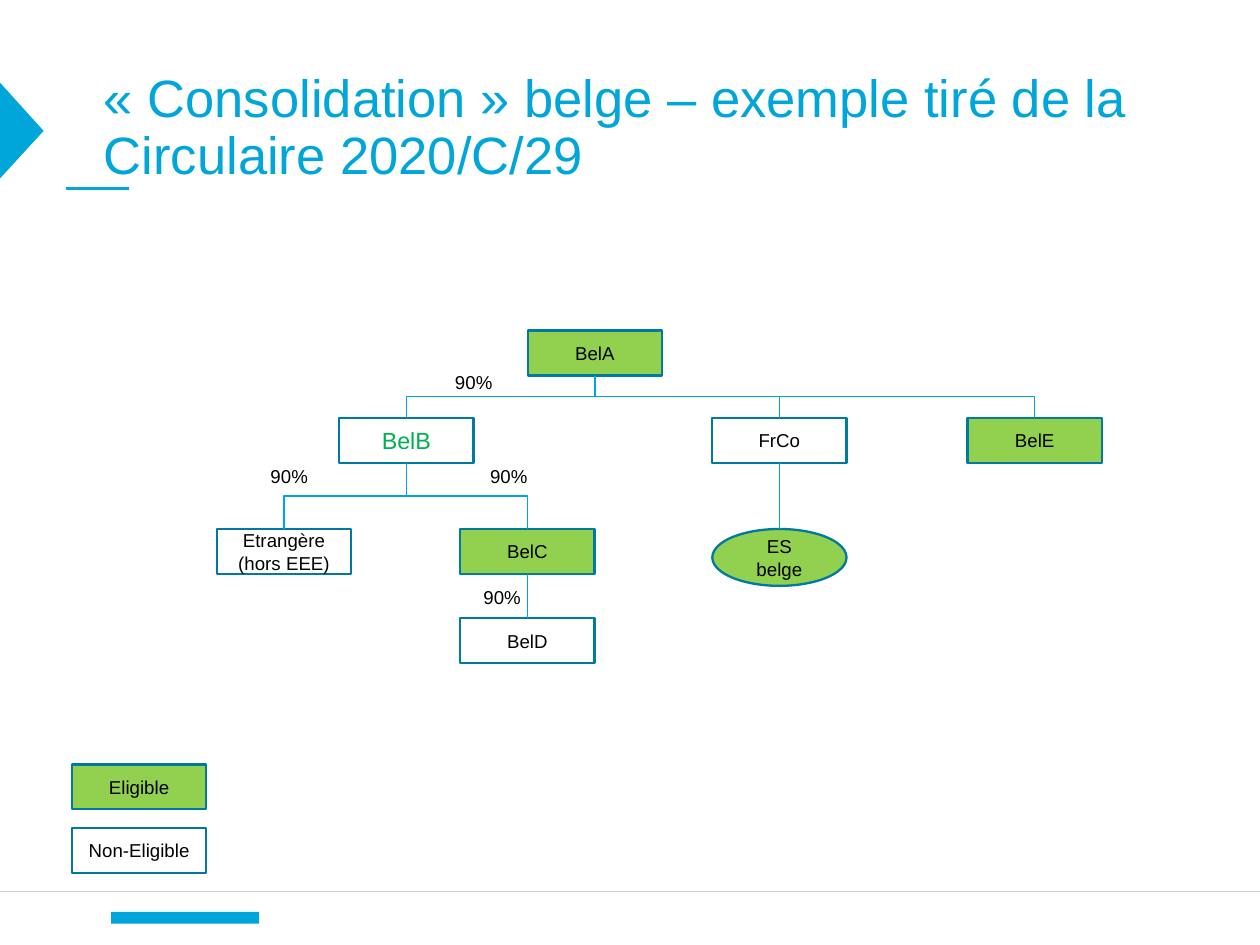
from dataclasses import dataclass

from lxml import etree
from pptx import Presentation
from pptx import util as u
from pptx.dml.color import RGBColor
from pptx.enum import shapes, text
from pptx.oxml import ns

Cm, Pt = u.Cm, u.Pt


@dataclass(frozen=True)
class Theme:
    font: str = "Arial"
    accent: RGBColor = RGBColor(0x00, 0xA5, 0xD9)
    outline: RGBColor = RGBColor(0x00, 0x7A, 0xA1)
    eligible: RGBColor = RGBColor(0x92, 0xD0, 0x50)
    not_eligible: RGBColor = RGBColor(0xFF, 0xFF, 0xFF)
    ink: RGBColor = RGBColor(0x00, 0x00, 0x00)
    highlight: RGBColor = RGBColor(0x00, 0xB0, 0x50)
    rule: RGBColor = RGBColor(0xD2, 0xD2, 0xD2)
    title_size: float = 22.5
    emphasis_size: float = 10
    label_size: float = 8


THEME = Theme()
SLIDE_WIDTH, SLIDE_HEIGHT = 19.05, 14.29
BOX_WIDTH, BOX_HEIGHT, ELLIPSE_HEIGHT = 2.03, 0.68, 0.86
TOP_ROW, SECOND_ROW, THIRD_ROW, FOURTH_ROW = 5.0, 6.32, 8.0, 9.35
BELB_LEFT, BELC_LEFT, FRCO_LEFT, LEGEND_LEFT = 5.13, 6.96, 10.77, 1.09
RECTANGLE = shapes.MSO_SHAPE.RECTANGLE

# name: (left, top, eligible)
COMPANIES = {
    "BelA": (7.98, TOP_ROW, True),
    "BelB": (BELB_LEFT, SECOND_ROW, False),
    "FrCo": (FRCO_LEFT, SECOND_ROW, False),
    "BelE": (14.63, SECOND_ROW, True),
    "Etrangère (hors EEE)": (3.28, THIRD_ROW, False),
    "BelC": (BELC_LEFT, THIRD_ROW, True),
    "ES belge": (FRCO_LEFT, THIRD_ROW, True),
    "BelD": (BELC_LEFT, FOURTH_ROW, False),
    "Eligible": (LEGEND_LEFT, 11.56, True),
    "Non-Eligible": (LEGEND_LEFT, 12.52, False),
}
HOLDINGS = [
    ("BelA", "BelB"), ("BelA", "FrCo"), ("BelA", "BelE"),
    ("BelB", "Etrangère (hors EEE)"), ("BelB", "BelC"),
    ("BelC", "BelD"), ("FrCo", "ES belge"),
]
STAKE_POSITIONS = [(6.63, 5.49), (3.84, 6.91), (7.06, 8.74), (7.16, 6.91)]


def add_run(paragraph, content, size=THEME.label_size, color=THEME.ink):
    run = paragraph.add_run()
    run.text = content
    run.font.name = THEME.font
    run.font.size = Pt(size)
    run.font.color.rgb = color


def fill_plain(shape, color):
    shape.shadow.inherit = False
    shape.fill.solid()
    shape.fill.fore_color.rgb = color
    shape.line.fill.background()


def style_line(connector, color, width):
    connector.line.color.rgb = color
    connector.line.width = Pt(width)
    etree.SubElement(connector._element.spPr, ns.qn("a:effectLst"))


def add_rule(slide, left, right, top, color, width):
    connector = slide.shapes.add_connector(
        shapes.MSO_CONNECTOR.STRAIGHT, Cm(left), Cm(top), Cm(right), Cm(top))
    style_line(connector, color, width)


def add_text(slide, left, top, width, height):
    frame = slide.shapes.add_textbox(Cm(left), Cm(top), Cm(width), Cm(height)).text_frame
    frame.word_wrap = True
    return frame


def add_title(slide):
    frame = add_text(slide, 1.57, 1.09, 16.41, 0.86)
    frame.margin_left = frame.margin_right = frame.margin_top = frame.margin_bottom = 0
    paragraph = frame.paragraphs[0]
    paragraph.line_spacing = 0.9
    add_run(paragraph, "« Consolidation » belge – exemple tiré de la Circulaire 2020/C/29",
            THEME.title_size, THEME.accent)


def add_company(slide, name, left, top, eligible):
    is_branch = name == "ES belge"
    shape = slide.shapes.add_shape(
        shapes.MSO_SHAPE.OVAL if is_branch else RECTANGLE, Cm(left), Cm(top),
        Cm(BOX_WIDTH), Cm(ELLIPSE_HEIGHT if is_branch else BOX_HEIGHT))
    fill_plain(shape, THEME.eligible if eligible else THEME.not_eligible)
    shape.line.color.rgb = THEME.outline
    shape.line.width = Pt(1)
    frame = shape.text_frame
    frame.word_wrap = True
    frame.vertical_anchor = text.MSO_ANCHOR.MIDDLE
    paragraph = frame.paragraphs[0]
    paragraph.alignment = text.PP_ALIGN.CENTER
    if name == "BelB":
        add_run(paragraph, name, THEME.emphasis_size, THEME.highlight)
    else:
        add_run(paragraph, name)
    return shape


def add_holding(slide, parent, child):
    """Join a parent's bottom to a child's top, bending halfway down if needed."""
    begin_x, end_x = (box.left + box.width // 2 for box in (parent, child))
    begin_y, end_y = parent.top + parent.height, child.top
    straight = begin_x == end_x
    kind = shapes.MSO_CONNECTOR.STRAIGHT if straight else shapes.MSO_CONNECTOR.ELBOW
    connector = slide.shapes.add_connector(kind, begin_x, begin_y, end_x, end_y)
    connector.begin_connect(parent, 2)
    connector.end_connect(child, 0)
    if not straight:
        turn_downwards(connector, begin_x, begin_y, end_x, end_y)
    style_line(connector, THEME.accent, 0.5)


def turn_downwards(connector, begin_x, begin_y, end_x, end_y):
    """Rotate an elbow so that it leaves and arrives vertically."""
    drop, span = end_y - begin_y, abs(end_x - begin_x)
    connector.left = (begin_x + end_x - drop) // 2
    connector.top = (begin_y + end_y - span) // 2
    connector.width, connector.height = drop, span
    to_right = end_x > begin_x
    transform = connector._element.spPr.find(ns.qn("a:xfrm"))
    transform.set("rot", str((270 if to_right else 90) * 60000))
    transform.set("flipH", "1" if to_right else "0")
    transform.set("flipV", "0")


def add_frame(slide):
    """Add the side arrow, the footer mark and the two rules."""
    builder = slide.shapes.build_freeform(0, Cm(1.25))
    builder.add_line_segments([(Cm(0.66), Cm(1.98)), (0, Cm(2.7))])
    fill_plain(builder.convert_to_shape(), THEME.accent)
    mark = slide.shapes.add_shape(RECTANGLE, Cm(1.68), Cm(13.79), Cm(2.24), Cm(0.18))
    fill_plain(mark, THEME.accent)
    add_rule(slide, 0, SLIDE_WIDTH, 13.48, THEME.rule, 0.5)
    add_rule(slide, 1.0, 1.95, 2.85, THEME.accent, 1)


def main():
    presentation = Presentation()
    presentation.slide_width = Cm(SLIDE_WIDTH)
    presentation.slide_height = Cm(SLIDE_HEIGHT)
    slide = presentation.slides.add_slide(presentation.slide_layouts[6])
    add_frame(slide)
    add_title(slide)
    companies = {name: add_company(slide, name, *place)
                 for name, place in COMPANIES.items()}
    for parent, child in HOLDINGS:
        add_holding(slide, companies[parent], companies[child])
    for left, top in STAKE_POSITIONS:
        add_run(add_text(slide, left, top, 1.57, 0.61).paragraphs[0], "90%")
    presentation.save("out.pptx")


if __name__ == "__main__":
    main()
